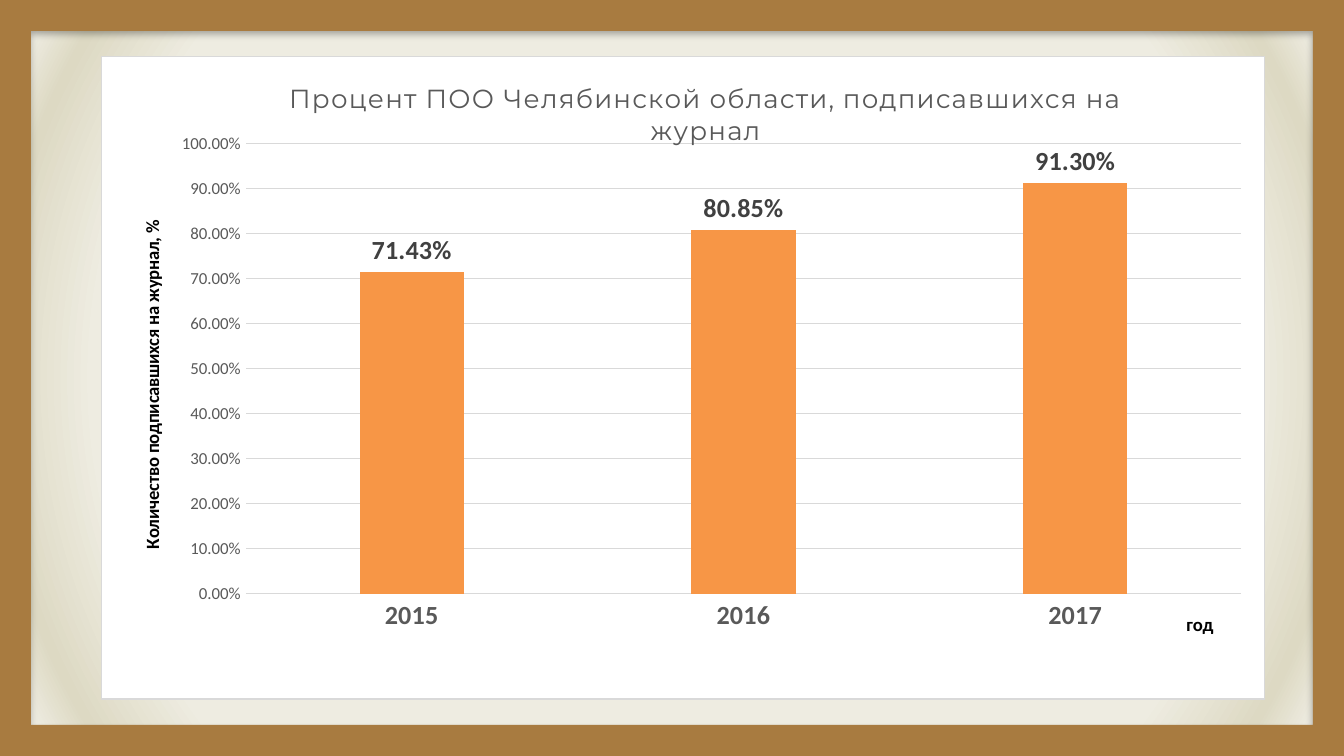
import pptx
import pptx.chart.data
import pptx.dml.color
import pptx.enum.chart
import pptx.enum.shapes
import pptx.oxml
import pptx.oxml.ns
import pptx.util

Cm = pptx.util.Cm
Pt = pptx.util.Pt
RGB = pptx.dml.color.RGBColor
ENUM = pptx.enum.chart

BROWN = RGB(0xA8, 0x7B, 0x40)
ORANGE = RGB(0xF7, 0x96, 0x46)
WHITE = RGB(0xFF, 0xFF, 0xFF)
BLACK = RGB(0, 0, 0)
CREAM = RGB(0xEE, 0xEC, 0xE1)
SAND = RGB(0xDD, 0xD9, 0xC3)
PALE = RGB(0xD9, 0xD9, 0xD9)
GREY = RGB(0x59, 0x59, 0x59)
DARK = RGB(0x40, 0x40, 0x40)


def make(tag, body):
    prefix = tag.split(":")[0]
    names = pptx.oxml.ns.nsdecls(*dict.fromkeys([prefix, "a"]))
    return pptx.oxml.parse_xml(f"<{tag} {names}>{body}</{tag}>")


def layout(left, top, size=None, inner=False):
    body = '<c:layoutTarget val="inner"/>' if inner else ""
    body += '<c:xMode val="edge"/><c:yMode val="edge"/>'
    body += f'<c:x val="{left}"/><c:y val="{top}"/>'
    if size:
        body += f'<c:w val="{size[0]}"/><c:h val="{size[1]}"/>'
    return make("c:layout", f"<c:manualLayout>{body}</c:manualLayout>")


def clear(node):
    for old in node.xpath("./c:layout"):
        node.remove(old)


class Deck:
    """Holds the style and the current slide, and draws each element on it."""

    font = "Calibri"
    head = "Montserrat"

    def __init__(self, wide, high):
        self.show = pptx.Presentation()
        self.show.slide_width, self.show.slide_height = wide, high
        self.slide = self.show.slides.add_slide(self.show.slide_layouts[6])

    def back(self, stops):
        marks = "".join(f'<a:gs pos="{pos * 1000}"><a:srgbClr val="{tone}"/></a:gs>'
                        for pos, tone in stops)
        fill = (f'<a:gradFill rotWithShape="1"><a:gsLst>{marks}</a:gsLst><a:path path="circle">'
                '<a:fillToRect l="50000" t="50000" r="50000" b="50000"/></a:path></a:gradFill>')
        self.slide._element.cSld.insert(0, make("p:bg", f"<p:bgPr>{fill}<a:effectLst/></p:bgPr>"))

    def frame(self, edge):
        kind = pptx.enum.shapes.MSO_SHAPE.FRAME
        shape = self.slide.shapes.add_shape(
            kind, 0, 0, self.show.slide_width, self.show.slide_height)
        shape.adjustments[0] = edge
        shape.fill.solid()
        shape.fill.fore_color.rgb = BROWN
        shape.line.fill.background()
        shape._element.spPr.append(make("a:effectLst", (
            f'<a:outerShdw blurRad="{Pt(3.5)}" dist="{Pt(2.2)}" dir="5400000" rotWithShape="0">'
            f'<a:srgbClr val="{BLACK}"><a:alpha val="32000"/></a:srgbClr></a:outerShdw>')))

    def style(self, font, size, tone, bold=False, name=None):
        font.name, font.size, font.bold = name or self.font, Pt(size), bold
        font.color.rgb = tone

    def title(self, item, text, spot, size, tone, bold=False, name=None, space=0, turn=0):
        frame = item.text_frame
        frame.text = text
        run = frame.paragraphs[0].runs[0]
        self.style(run.font, size, tone, bold, name)
        run._r.get_or_add_rPr().set("spc", str(space))
        body = frame._txBody.bodyPr
        body.set("rot", str(turn * 60000))
        body.set("vert", "horz")
        node = item._element
        clear(node)
        node.find(pptx.oxml.ns.qn("c:tx")).addnext(layout(*spot))

    def axis(self, axis, size, bold=False):
        axis.major_tick_mark = axis.minor_tick_mark = ENUM.XL_TICK_MARK.NONE
        self.style(axis.tick_labels.font, size, GREY, bold)

    def line(self, line):
        line.color.rgb, line.width = PALE, Pt(0.75)

    def chart(self, box, cats, vals):
        data = pptx.chart.data.CategoryChartData(number_format="0.00%")
        data.categories = cats
        data.add_series("Series 1", vals)
        kind = ENUM.XL_CHART_TYPE.COLUMN_CLUSTERED
        chart = self.slide.shapes.add_chart(kind, *box, data).chart
        chart.has_legend = False
        self.style(chart.font, 10, BLACK)
        self.title(chart.chart_title, "Процент ПОО Челябинской области, подписавшихся на журнал",
                   (0.157, 0.03), 14, GREY, name=self.head, space=50)
        chart.chart_title.include_in_layout = False

        years, share = chart.category_axis, chart.value_axis
        self.axis(years, 14, True)
        self.line(years.format.line)
        self.title(years.axis_title, "год", (0.93, 0.86), 10, BLACK, True)
        self.axis(share, 9)
        share.format.line.fill.background()
        share.minimum_scale, share.maximum_scale, share.major_unit = 0, 1, 0.1
        share.tick_labels.number_format = "0.00%"
        share.tick_labels.number_format_is_linked = False
        self.line(share.major_gridlines.format.line)
        self.title(share.axis_title, "Количество подписавшихся на журнал, %",
                   (0.03, 0.25), 10, BLACK, True, turn=-90)

        plot = chart.plots[0]
        plot.gap_width, plot.overlap, plot.vary_by_categories = 219, -27, False
        bars = plot.series[0]
        bars.format.fill.solid()
        bars.format.fill.fore_color.rgb = ORANGE
        tags = bars.data_labels
        tags.show_value = True
        tags.position = ENUM.XL_LABEL_POSITION.OUTSIDE_END
        tags.number_format, tags.number_format_is_linked = "0.00%", False
        self.style(tags.font, 14, DARK, True)

        root = chart.element
        area = root.xpath("./c:chart/c:plotArea")[0]
        clear(area)
        area.insert(0, layout(0.124, 0.136, (0.856, 0.7), True))
        root.xpath("./c:txPr")[0].addprevious(make("c:spPr", (
            f'<a:solidFill><a:srgbClr val="{WHITE}"/></a:solidFill><a:ln w="{Pt(0.75)}">'
            f'<a:solidFill><a:srgbClr val="{PALE}"/></a:solidFill></a:ln>')))


def main():
    deck = Deck(Cm(25.4), Cm(14.29))
    deck.back([(75, CREAM), (88, SAND), (100, WHITE)])
    deck.frame(0.041)
    deck.chart((Cm(1.91), Cm(1.05), Cm(22), Cm(12.18)),
               ["2015", "2016", "2017"], [0.7143, 0.8085, 0.913])
    deck.show.save("out.pptx")


if __name__ == "__main__":
    main()
